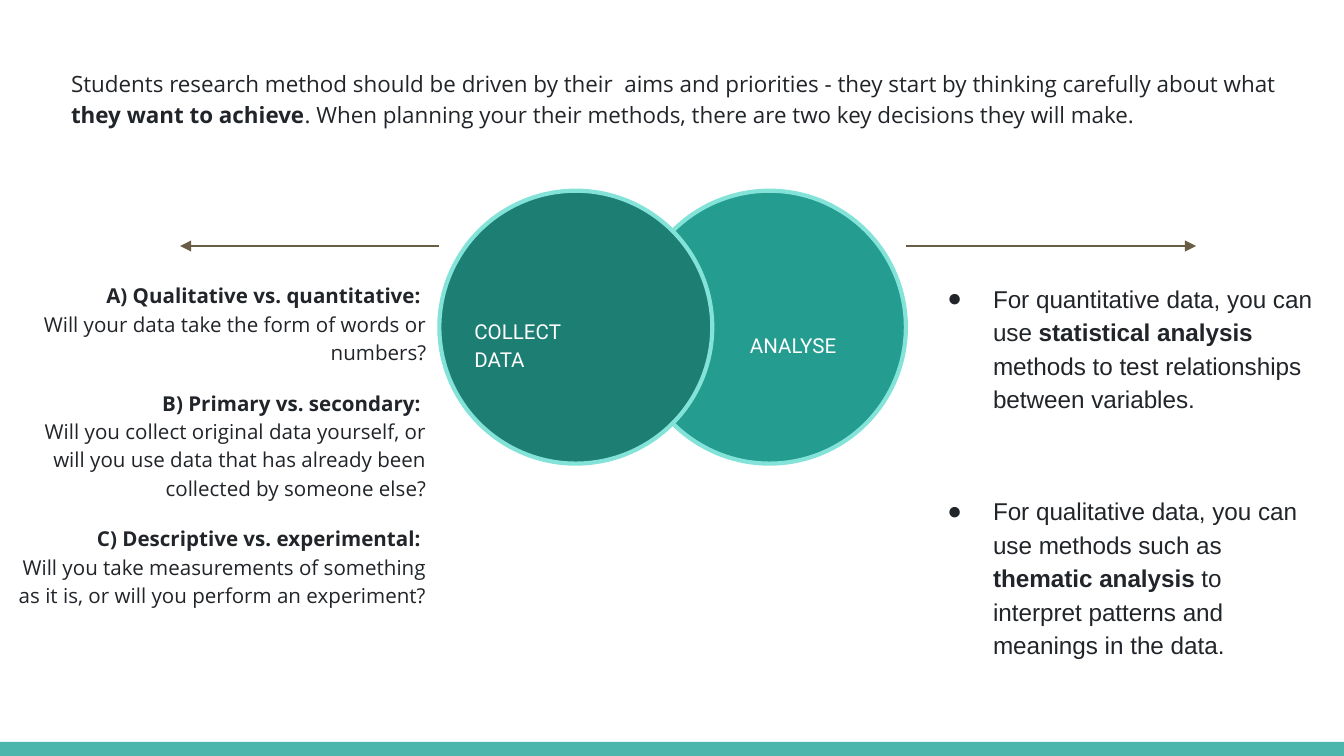
from lxml import etree
from pptx import Presentation
from pptx.dml.color import RGBColor
from pptx.enum.shapes import MSO_CONNECTOR, MSO_SHAPE
from pptx.enum.text import MSO_ANCHOR, PP_ALIGN
from pptx.oxml.ns import qn
from pptx.util import Pt

RECTANGLE, OVAL = MSO_SHAPE.RECTANGLE, MSO_SHAPE.OVAL
STRAIGHT = MSO_CONNECTOR.STRAIGHT
TOP, MIDDLE = MSO_ANCHOR.TOP, MSO_ANCHOR.MIDDLE
LEFT, RIGHT = PP_ALIGN.LEFT, PP_ALIGN.RIGHT

WHITE = RGBColor(0xFF, 0xFF, 0xFF)
INK = RGBColor(0x21, 0x25, 0x29)
FOOTER_TEAL = RGBColor(0x4D, 0xB6, 0xAC)
LIGHT_TEAL = RGBColor(0x24, 0x9C, 0x90)
DARK_TEAL = RGBColor(0x1D, 0x7E, 0x74)
RING = RGBColor(0x83, 0xE3, 0xD9)
BROWN = RGBColor(0x69, 0x5D, 0x46)

# Each paragraph is a list of (text, bold) pieces
INTRO = [
    ("Students research method should be driven by their  aims and priorities"
     " - they start by thinking carefully about what ", False),
    ("they want to achieve", True),
    (". When planning your their methods, there are two key decisions they will make.", False),
]
QUESTIONS = [
    ("A) Qualitative vs. quantitative: ",
     "Will your data take the form of words or numbers?"),
    ("B) Primary vs. secondary: ",
     "Will you collect original data yourself, or will you use data that has "
     "already been collected by someone else?"),
    ("C) Descriptive vs. experimental: ",
     "Will you take measurements of something as it is, or will you perform an experiment?"),
]
ANALYSES = [
    [("For quantitative data, you can use ", False),
     ("statistical analysis", True),
     (" methods to test relationships between variables.", False)],
    [("For qualitative data, you can use methods such as ", False),
     ("thematic analysis", True),
     (" to interpret patterns and meanings in the data.", False)],
]

CIRCLE_TOP, CIRCLE_SIZE = 102.2, 146.2
COLLECT_LEFT, ANALYSE_LEFT = 235.4, 339.1
ARROW_Y = 131.8
COLUMN_TOP = 142.6


def add_filled_shape(slide, kind, left, top, width, height, fill, outline=None):
    shape = slide.shapes.add_shape(kind, Pt(left), Pt(top), Pt(width), Pt(height))
    shape.shadow.inherit = False
    shape.fill.solid()
    shape.fill.fore_color.rgb = fill
    if outline is None:
        shape.line.fill.background()
    else:
        shape.line.color.rgb = outline
        shape.line.width = Pt(2.25)


def add_text(slide, left, top, width, height, paragraphs, font, size,
             color=INK, align=LEFT, anchor=TOP, gap=0):
    """Write lists of (text, bold) pieces; None stands for a line break."""
    box = slide.shapes.add_textbox(Pt(left), Pt(top), Pt(width), Pt(height))
    frame = box.text_frame
    frame.word_wrap = True
    frame.vertical_anchor = anchor
    frame.margin_left = frame.margin_right = Pt(7.2)
    frame.margin_top = frame.margin_bottom = Pt(7.2)
    for index, pieces in enumerate(paragraphs):
        paragraph = frame.add_paragraph() if index else frame.paragraphs[0]
        paragraph.alignment = align
        paragraph.line_spacing = 1.15
        paragraph.space_before = Pt(gap if index else 0)
        for piece in pieces:
            if piece is None:
                paragraph.add_line_break()
                continue
            run = paragraph.add_run()
            run.text, run.font.bold = piece
            run.font.name = font
            run.font.size = Pt(size)
            run.font.color.rgb = color
    return frame


def add_bullets(frame):
    for paragraph in frame.paragraphs:
        properties = paragraph._p.get_or_add_pPr()
        properties.set("marL", str(Pt(36)))
        properties.set("indent", str(-Pt(24.5)))
        bullet_color = etree.SubElement(properties, qn("a:buClr"))
        etree.SubElement(bullet_color, qn("a:srgbClr"), val=str(INK))
        etree.SubElement(properties, qn("a:buFont"), typeface="Arial")
        etree.SubElement(properties, qn("a:buChar"), char="●")


def add_arrow(slide, start_x, end_x, y):
    arrow = slide.shapes.add_connector(STRAIGHT, Pt(start_x), Pt(y), Pt(end_x), Pt(y))
    arrow.line.color.rgb = BROWN
    arrow.line.width = Pt(0.75)
    etree.SubElement(arrow.line._get_or_add_ln(), qn("a:tailEnd"),
                     type="triangle", w="med", len="med")
    etree.SubElement(arrow._element.spPr, qn("a:effectLst"))


def add_labelled_circle(slide, left, fill, label, label_left):
    add_filled_shape(slide, OVAL, left, CIRCLE_TOP, CIRCLE_SIZE, CIRCLE_SIZE, fill, RING)
    add_text(slide, label_left, 163.4, 85, 41, [[(label, False)]],
             "Roboto", 11, color=WHITE, anchor=MIDDLE)


def main():
    presentation = Presentation()
    presentation.slide_width, presentation.slide_height = Pt(720), Pt(405)
    slide = presentation.slides.add_slide(presentation.slide_layouts[6])

    # Footer bar and introduction
    add_filled_shape(slide, RECTANGLE, 0, 397.5, 720, 7.5, FOOTER_TEAL)
    add_text(slide, 31, 28.1, 664.6, 50, [INTRO], "Open Sans", 12)

    # Overlapping circles, the left one in front
    add_labelled_circle(slide, ANALYSE_LEFT, LIGHT_TEAL, "ANALYSE", 394.6)
    add_labelled_circle(slide, COLLECT_LEFT, DARK_TEAL, "COLLECT DATA", 247)

    # Arrows out to the two columns
    add_arrow(slide, COLLECT_LEFT, 96.5, ARROW_Y)
    add_arrow(slide, ANALYSE_LEFT + CIRCLE_SIZE, 640.8, ARROW_Y)

    # Questions on collecting data
    questions = [[(title, True), None, (question, False)] for title, question in QUESTIONS]
    add_text(slide, -0.7, COLUMN_TOP, 236.2, 205.2, questions,
             "Open Sans", 11, align=RIGHT, gap=12)

    # Ways of analysing data
    analyses = add_text(slide, 488.9, COLUMN_TOP, 221.8, 217.4, ANALYSES,
                        "Arial", 13, gap=42)
    add_bullets(analyses)

    presentation.save("out.pptx")


if __name__ == "__main__":
    main()
